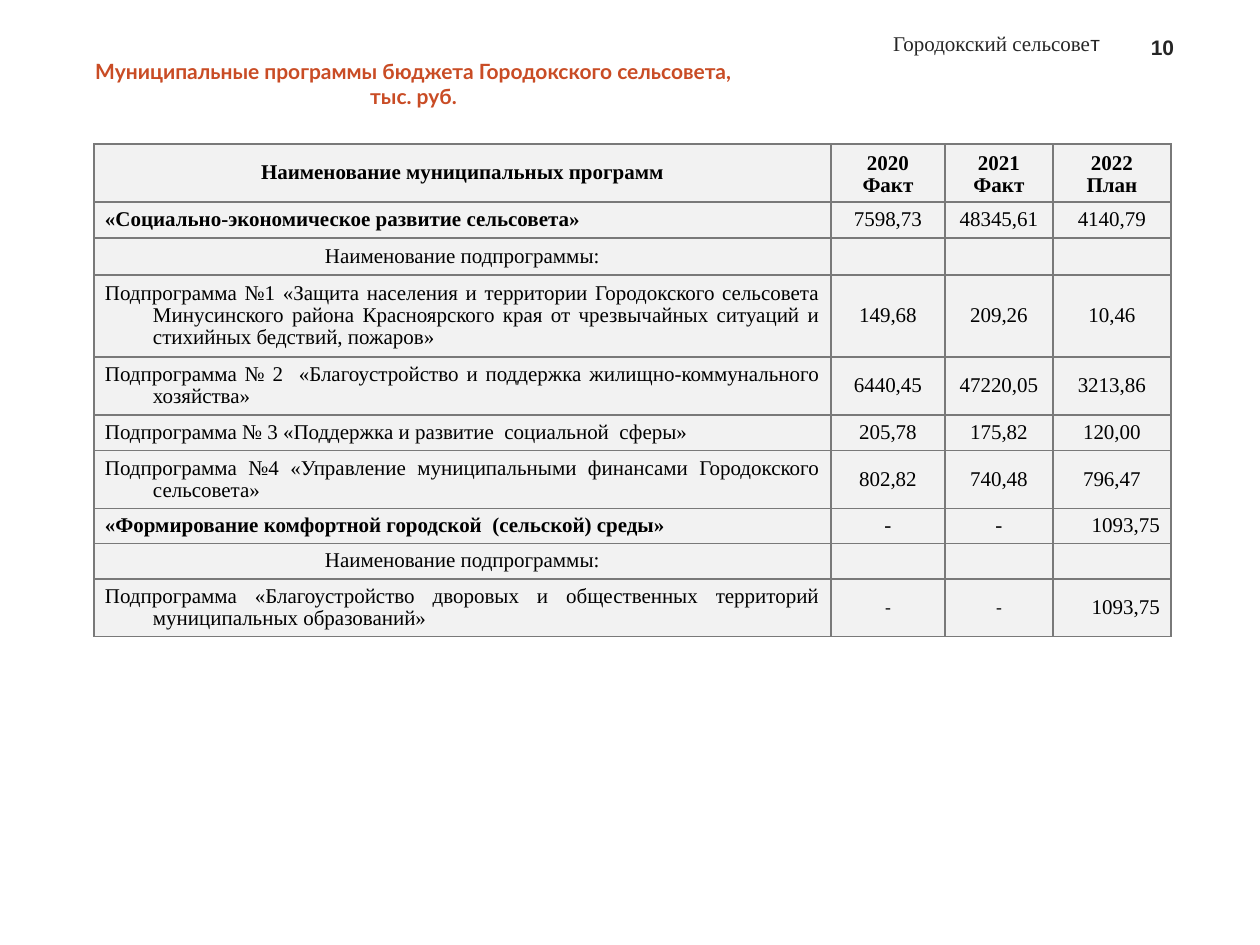
import dataclasses

import lxml.etree
import pptx
import pptx.dml.color
import pptx.enum.text
import pptx.oxml.ns
import pptx.util

ALIGN = pptx.enum.text.PP_ALIGN
ANCHOR = pptx.enum.text.MSO_ANCHOR
EMU_PER_PX = 914400 / 126


@dataclasses.dataclass(frozen=True)
class Theme:
    """Colours, fonts and type sizes of the slide."""
    ink: str = "000000"
    header: str = "262626"
    accent: str = "C94C25"
    cell: str = "F2F2F2"
    border: str = "797979"
    serif: str = "Times New Roman"
    sans: str = "Arial"
    display: str = "Lato"
    body: int = 12
    small: int = 10
    line_spacing: float = 0.95


THEME = Theme()
YEARS = [("2020", "Факт"), ("2021", "Факт"), ("2022", "План")]
SUBHEADING = "Наименование подпрограммы:"
PROGRAMS = [
    ("«Социально-экономическое развитие сельсовета»", "7598,73", "48345,61", "4140,79"),
    (SUBHEADING, "", "", ""),
    ("Подпрограмма №1 «Защита населения и территории Городокского сельсовета "
     "Минусинского района Красноярского края от чрезвычайных ситуаций и "
     "стихийных бедствий, пожаров»", "149,68", "209,26", "10,46"),
    ("Подпрограмма № 2  «Благоустройство и поддержка жилищно-коммунального хозяйства»",
     "6440,45", "47220,05", "3213,86"),
    ("Подпрограмма № 3 «Поддержка и развитие  социальной  сферы»",
     "205,78", "175,82", "120,00"),
    ("Подпрограмма №4 «Управление муниципальными финансами Городокского сельсовета»",
     "802,82", "740,48", "796,47"),
    ("«Формирование комфортной городской  (сельской) среды»", "-", "-", "1093,75"),
    (SUBHEADING, "", "", ""),
    ("Подпрограмма «Благоустройство дворовых и общественных территорий "
     "муниципальных образований»", "-", "-", "1093,75"),
]
COLUMN_WIDTHS = [737, 114, 108, 118]
ROW_HEIGHTS = [58, 36, 37, 81, 58, 36, 57, 35, 34, 58]


def px(length):
    """Turn pixels into EMU."""
    return pptx.util.Emu(round(length * EMU_PER_PX))


def add_run(paragraph, text, font_name, color, bold=False, size=THEME.body):
    """Add one formatted run to a paragraph."""
    run = paragraph.add_run()
    run.text = text
    run.font.name = font_name
    run.font.size = pptx.util.Pt(size)
    run.font.bold = bold
    run.font.color.rgb = pptx.dml.color.RGBColor.from_string(color)


def set_indent(paragraph, left, first_line=0):
    """Set the left margin and first-line indent of a paragraph."""
    properties = paragraph._p.get_or_add_pPr()
    properties.set("marL", str(px(left)))
    properties.set("indent", str(px(first_line)))


def add_label(slide, box, runs, alignment, anchor=ANCHOR.BOTTOM, side_margin=13):
    """Add a one-paragraph text box and return its paragraph."""
    shape = slide.shapes.add_textbox(*map(px, box))
    frame = shape.text_frame
    frame.word_wrap = True
    frame.vertical_anchor = anchor
    frame.margin_left = frame.margin_right = px(side_margin)
    frame.margin_top = frame.margin_bottom = px(6)
    paragraph = frame.paragraphs[0]
    paragraph.alignment = alignment
    for run in runs:
        add_run(paragraph, *run)
    return paragraph


def add_page_header(slide, box):
    """Add the settlement name and the page number."""
    left, top, width, height = box
    number_width = 69
    add_label(slide, (left, top, 305, height),
              [("Городокский сельсове", THEME.serif, THEME.header),
               ("т", THEME.sans, THEME.header)], ALIGN.RIGHT)
    add_label(slide, (left + width - number_width, top + 4, number_width, height),
              [("10", THEME.sans, THEME.header, True)], ALIGN.CENTER)


def add_title(slide, box):
    """Add the slide title."""
    title = "Муниципальные программы бюджета Городокского сельсовета, тыс. руб."
    paragraph = add_label(slide, box, [(title, THEME.display, THEME.accent, True)],
                          ALIGN.CENTER, ANCHOR.MIDDLE, 0)
    set_indent(paragraph, 25)


def style_cell(cell, anchor):
    """Give a cell its fill, margins and borders."""
    cell.vertical_anchor = anchor
    cell.margin_left = cell.margin_right = px(11)
    cell.margin_top = cell.margin_bottom = px(5)
    cell.fill.solid()
    cell.fill.fore_color.rgb = pptx.dml.color.RGBColor.from_string(THEME.cell)
    qn = pptx.oxml.ns.qn
    properties = cell._tc.get_or_add_tcPr()
    for index, side in enumerate(("a:lnL", "a:lnR", "a:lnT", "a:lnB")):
        line = lxml.etree.Element(qn(side), w=str(pptx.util.Pt(1)))
        fill = lxml.etree.SubElement(line, qn("a:solidFill"))
        lxml.etree.SubElement(fill, qn("a:srgbClr"), val=THEME.border)
        properties.insert(index, line)


def fill_cell(cell, lines, alignment, anchor=ANCHOR.MIDDLE, bold=False, size=THEME.body):
    """Write lines of text into a styled cell."""
    style_cell(cell, anchor)
    for index, text in enumerate(lines):
        frame = cell.text_frame
        paragraph = frame.add_paragraph() if index else frame.paragraphs[0]
        paragraph.alignment = alignment
        paragraph.line_spacing = THEME.line_spacing
        set_indent(paragraph, 48, -48)
        if text:
            add_run(paragraph, text, THEME.serif, THEME.ink, bold, size)
        else:
            lxml.etree.SubElement(paragraph._p, pptx.oxml.ns.qn("a:endParaRPr"),
                                  sz=str(size * 100))


def add_program_table(slide, box):
    """Add the table of municipal programs by year."""
    frame = slide.shapes.add_table(len(ROW_HEIGHTS), len(COLUMN_WIDTHS), *map(px, box))
    table = frame.table
    table.first_row = table.horz_banding = False
    for column, width in zip(table.columns, COLUMN_WIDTHS):
        column.width = px(width)
    for row, height in zip(table.rows, ROW_HEIGHTS):
        row.height = px(height)
    fill_cell(table.cell(0, 0), ["Наименование муниципальных программ"],
              ALIGN.CENTER, bold=True)
    for column, lines in enumerate(YEARS, 1):
        fill_cell(table.cell(0, column), lines, ALIGN.CENTER, ANCHOR.BOTTOM, True)
    for row, (name, *values) in enumerate(PROGRAMS, 1):
        alignment = ALIGN.CENTER if name == SUBHEADING else ALIGN.JUSTIFY
        fill_cell(table.cell(row, 0), [name], alignment, bold=name.startswith("«"))
        for column, value in enumerate(values, 1):
            alignment = ALIGN.RIGHT if value == "1093,75" else ALIGN.CENTER
            is_small = value == "-" and row == len(PROGRAMS)
            fill_cell(table.cell(row, column), [value], alignment,
                      size=THEME.small if is_small else THEME.body)


def main():
    """Build and save the presentation."""
    presentation = pptx.Presentation()
    presentation.slide_width = px(1260)
    presentation.slide_height = px(945)
    slide = presentation.slides.add_slide(presentation.slide_layouts[6])
    add_page_header(slide, (808, 20, 389, 42))
    add_title(slide, (64, 49, 674, 69))
    add_program_table(slide, (94, 144, sum(COLUMN_WIDTHS), sum(ROW_HEIGHTS)))
    presentation.save("out.pptx")


if __name__ == "__main__":
    main()
